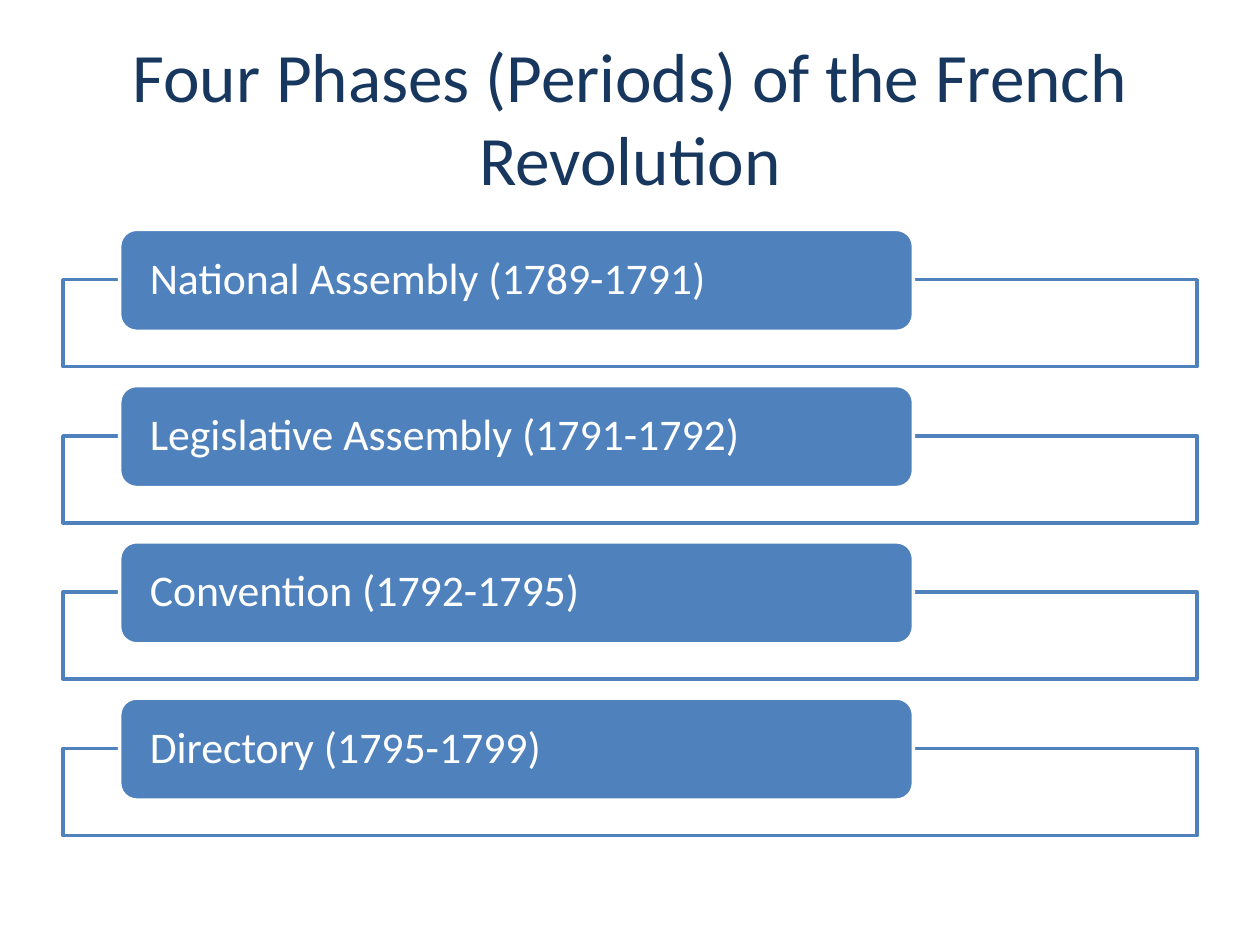
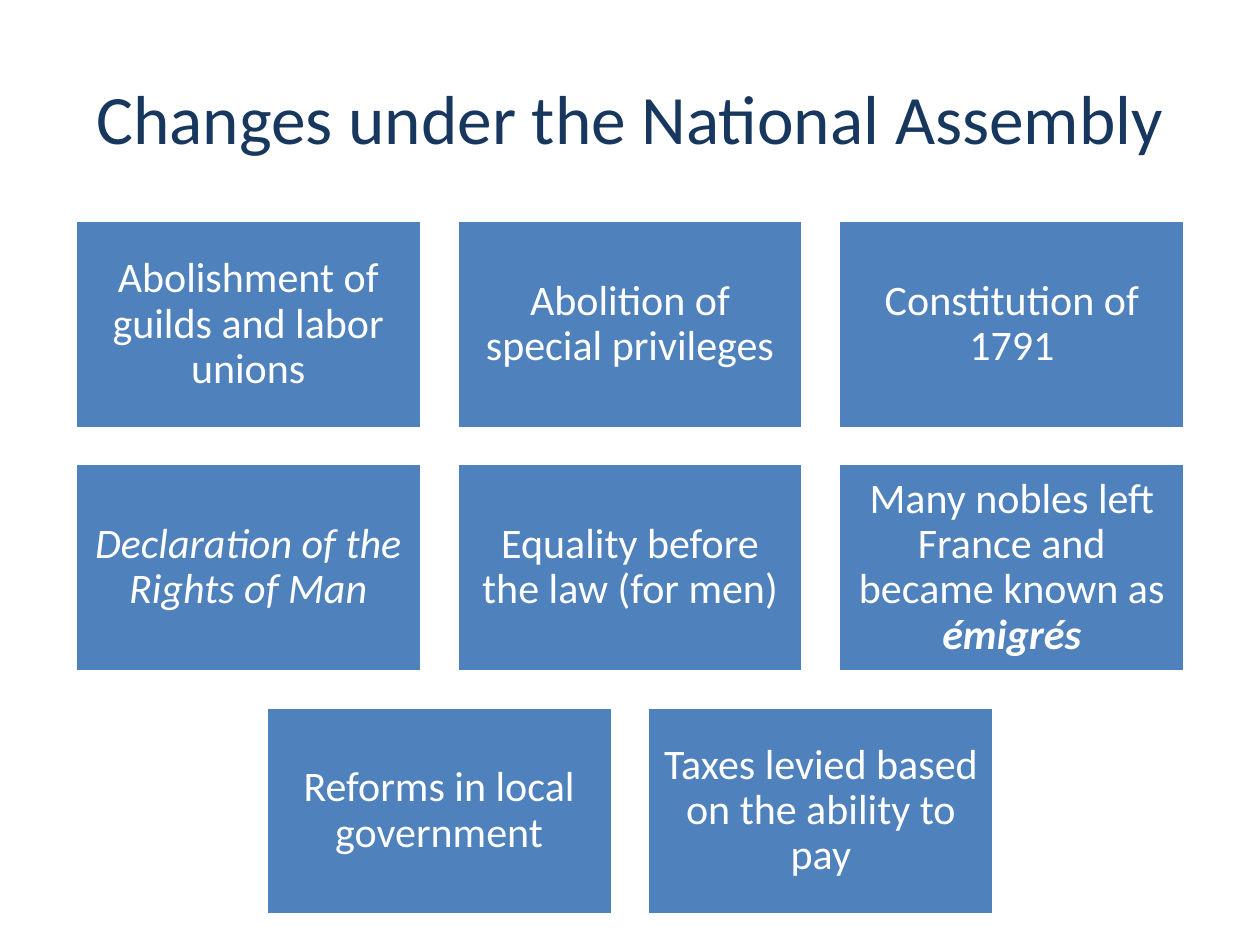
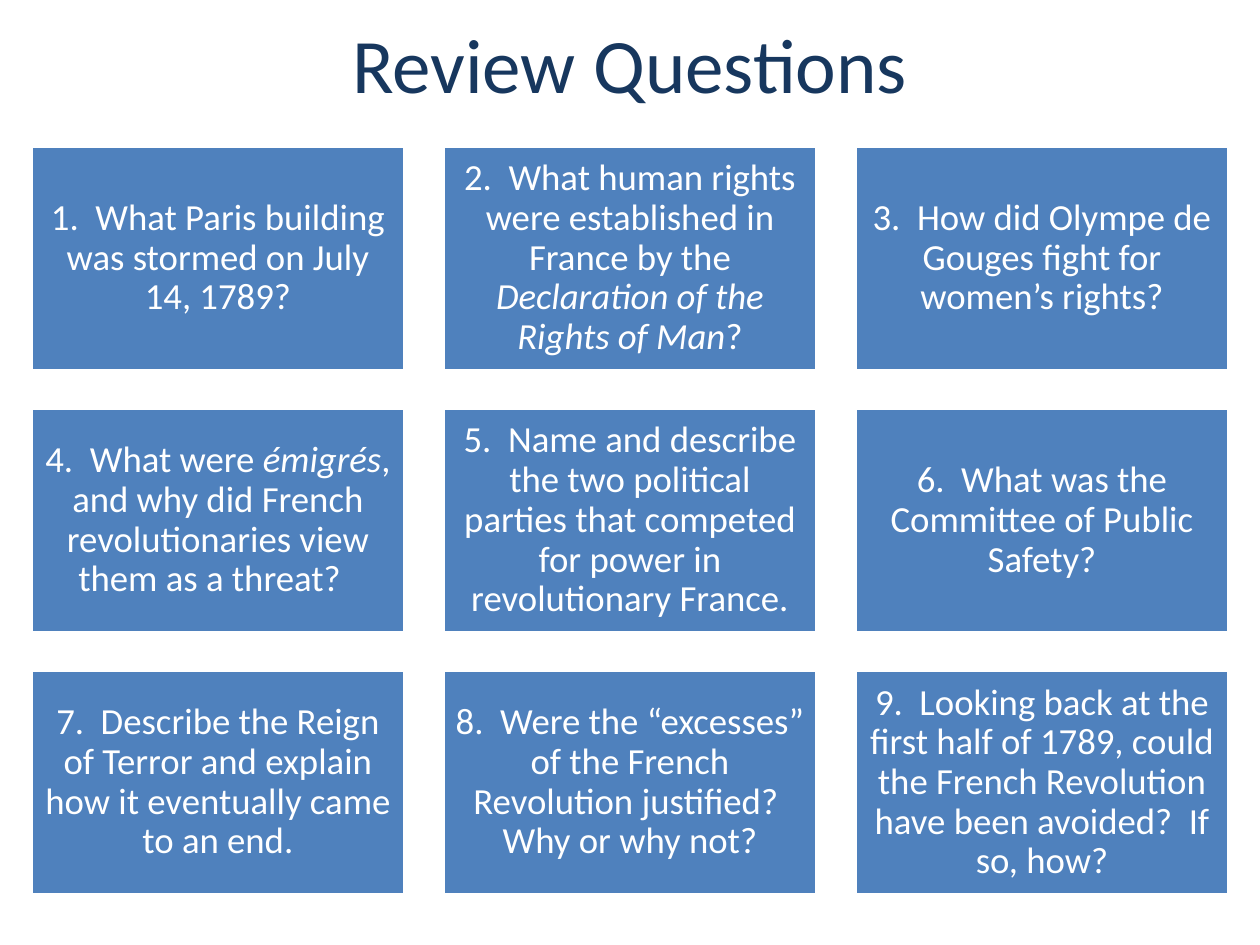
from dataclasses import dataclass
from typing import NamedTuple

from lxml.etree import SubElement
from pptx import Presentation
from pptx.dml.color import RGBColor
from pptx.enum.shapes import MSO_SHAPE as Preset
from pptx.enum.text import MSO_ANCHOR as Anchor, MSO_AUTO_SIZE as AutoSize, PP_ALIGN as Align
from pptx.oxml.ns import qn
from pptx.util import Inches, Pt


@dataclass(frozen=True)
class Theme:
    font: str = "Calibri"
    white: RGBColor = RGBColor(0xFF, 0xFF, 0xFF)
    blue: RGBColor = RGBColor(0x4F, 0x81, 0xBD)
    navy: RGBColor = RGBColor(0x17, 0x37, 0x5E)
    outline: float = 2
    title_size: float = 39.6
    review_title_size: float = 44
    phase_size: float = 25
    change_size: float = 24
    question_size: float = 21


class Span(NamedTuple):
    text: str
    italic: bool = False
    bold: bool = False


class Box(NamedTuple):
    left: float
    top: float
    width: float
    height: float

    def lengths(self) -> list:
        return [Inches(value) for value in self]


@dataclass(frozen=True)
class TextStyle:
    size: float
    align: Align
    side_inset: float
    end_inset: float


@dataclass(frozen=True)
class CardGrid:
    top: float
    width: float
    height: float
    gap: float
    style: TextStyle
    columns: int = 3


THEME = Theme()
SLIDE_WIDTH, SLIDE_HEIGHT = 10, 7.5
TITLE_BOX = Box(0.5, 0.3, 9, 1.25)
REVIEW_TITLE_BOX = Box(0.5, 0, 9, 1)

PHASE_TOP, PHASE_PITCH, FRAME_DROP = 1.82, 1.24, 0.4
PHASE_STYLE = TextStyle(THEME.phase_size, Align.LEFT, 0.2, 0)
PHASES = [
    "National Assembly (1789-1791)",
    "Legislative Assembly (1791-1792)",
    "Convention (1792-1795)",
    "Directory (1795-1799)",
]

CHANGE_GRID = CardGrid(1.75, 2.75, 1.65, 0.28,
                       TextStyle(THEME.change_size, Align.CENTER, 0.1, 0.1))
CHANGES = [
    [Span("Abolishment of guilds and labor unions")],
    [Span("Abolition of special privileges")],
    [Span("Constitution of 1791")],
    [Span("Declaration of the Rights of Man", italic=True)],
    [Span("Equality before the law (for men)")],
    [Span("Many nobles left France and became known as "),
     Span("émigrés", italic=True, bold=True)],
    [Span("Reforms in local government")],
    [Span("Taxes levied based on the ability to pay")],
]

QUESTION_GRID = CardGrid(1.16, 2.97, 1.78, 0.3,
                         TextStyle(THEME.question_size, Align.CENTER, 0.09, 0.09))
QUESTIONS = [
    [Span("1.  What Paris building was stormed on July 14, 1789?")],
    [Span("2.  What human rights were established in France by the "),
     Span("Declaration of the Rights of Man", italic=True), Span("?")],
    [Span("3.  How did Olympe de Gouges fight for women’s rights?")],
    [Span("4.  What were "), Span("émigrés", italic=True),
     Span(", and why did French revolutionaries view them as a threat?  ")],
    [Span("5.  Name and describe the two political parties that competed "
          "for power in revolutionary France.")],
    [Span("6.  What was the Committee of Public Safety?")],
    [Span("7.  Describe the Reign of Terror and explain how it eventually came to an end.")],
    [Span("8.  Were the “excesses” of the French Revolution justified?  Why or why not?")],
    [Span("9.  Looking back at the first half of 1789, could the French Revolution "
          "have been avoided?  If so, how?")],
]


def add_span(paragraph, span: Span, size: float, color: RGBColor) -> None:
    run = paragraph.add_run()
    run.text = span.text
    font = run.font
    font.name, font.size, font.color.rgb = THEME.font, Pt(size), color
    font.italic, font.bold = span.italic, span.bold


def add_titled_slide(presentation, title: str, box: Box = TITLE_BOX,
                     size: float = THEME.title_size):
    slide = presentation.slides.add_slide(presentation.slide_layouts.get_by_name("Title Only"))
    shape = slide.shapes.title
    shape.left, shape.top, shape.width, shape.height = box.lengths()
    frame = shape.text_frame
    frame.auto_size, frame.vertical_anchor = AutoSize.NONE, Anchor.MIDDLE
    paragraph = frame.paragraphs[0]
    paragraph.alignment = Align.CENTER
    add_span(paragraph, Span(title), size, THEME.navy)
    return slide


def add_panel(slide, preset: Preset, box: Box, fill: RGBColor, line: RGBColor):
    shape = slide.shapes.add_shape(preset, *box.lengths())
    shape.shadow.inherit = False
    shape.fill.solid()
    shape.fill.fore_color.rgb = fill
    shape.line.color.rgb = line
    shape.line.width = Pt(THEME.outline)
    return shape


def add_card(slide, preset: Preset, box: Box, spans: list[Span], style: TextStyle) -> None:
    """Add a blue panel with white text."""
    frame = add_panel(slide, preset, box, THEME.blue, THEME.white).text_frame
    frame.word_wrap = True
    frame.vertical_anchor = Anchor.MIDDLE
    frame.margin_left = frame.margin_right = Inches(style.side_inset)
    frame.margin_top = frame.margin_bottom = Inches(style.end_inset)
    paragraph = frame.paragraphs[0]
    paragraph.alignment, paragraph.line_spacing = style.align, 0.9
    for span in spans:
        add_span(paragraph, span, style.size, THEME.white)


def add_phase(slide, top: float, name: str) -> None:
    """Add a translucent frame with the phase's label over its upper edge."""
    frame = add_panel(slide, Preset.RECTANGLE, Box(0.5, top + FRAME_DROP, 9, 0.69),
                      THEME.white, THEME.blue)
    color = frame.fill._xPr.find(qn("a:solidFill"))[0]
    SubElement(color, qn("a:alpha"), val="90000")
    add_card(slide, Preset.ROUNDED_RECTANGLE, Box(0.95, top, 6.3, 0.81),
             [Span(name)], PHASE_STYLE)


def add_card_grid(slide, grid: CardGrid, cards: list[list[Span]]) -> None:
    """Fill rows from the top, each row centred on the slide."""
    for row, start in enumerate(range(0, len(cards), grid.columns)):
        row_cards = cards[start:start + grid.columns]
        pitch = grid.width + grid.gap
        left = (SLIDE_WIDTH - len(row_cards) * pitch + grid.gap) / 2
        top = grid.top + row * (grid.height + grid.gap)
        for column, spans in enumerate(row_cards):
            box = Box(left + column * pitch, top, grid.width, grid.height)
            add_card(slide, Preset.RECTANGLE, box, spans, grid.style)


def main() -> None:
    presentation = Presentation()
    presentation.slide_width = Inches(SLIDE_WIDTH)
    presentation.slide_height = Inches(SLIDE_HEIGHT)

    phases = add_titled_slide(presentation, "Four Phases (Periods) of the French Revolution")
    for index, name in enumerate(PHASES):
        add_phase(phases, PHASE_TOP + index * PHASE_PITCH, name)

    changes = add_titled_slide(presentation, "Changes under the National Assembly")
    add_card_grid(changes, CHANGE_GRID, CHANGES)

    review = add_titled_slide(presentation, "Review Questions",
                              REVIEW_TITLE_BOX, THEME.review_title_size)
    add_card_grid(review, QUESTION_GRID, QUESTIONS)

    presentation.save("out.pptx")


if __name__ == "__main__":
    main()
